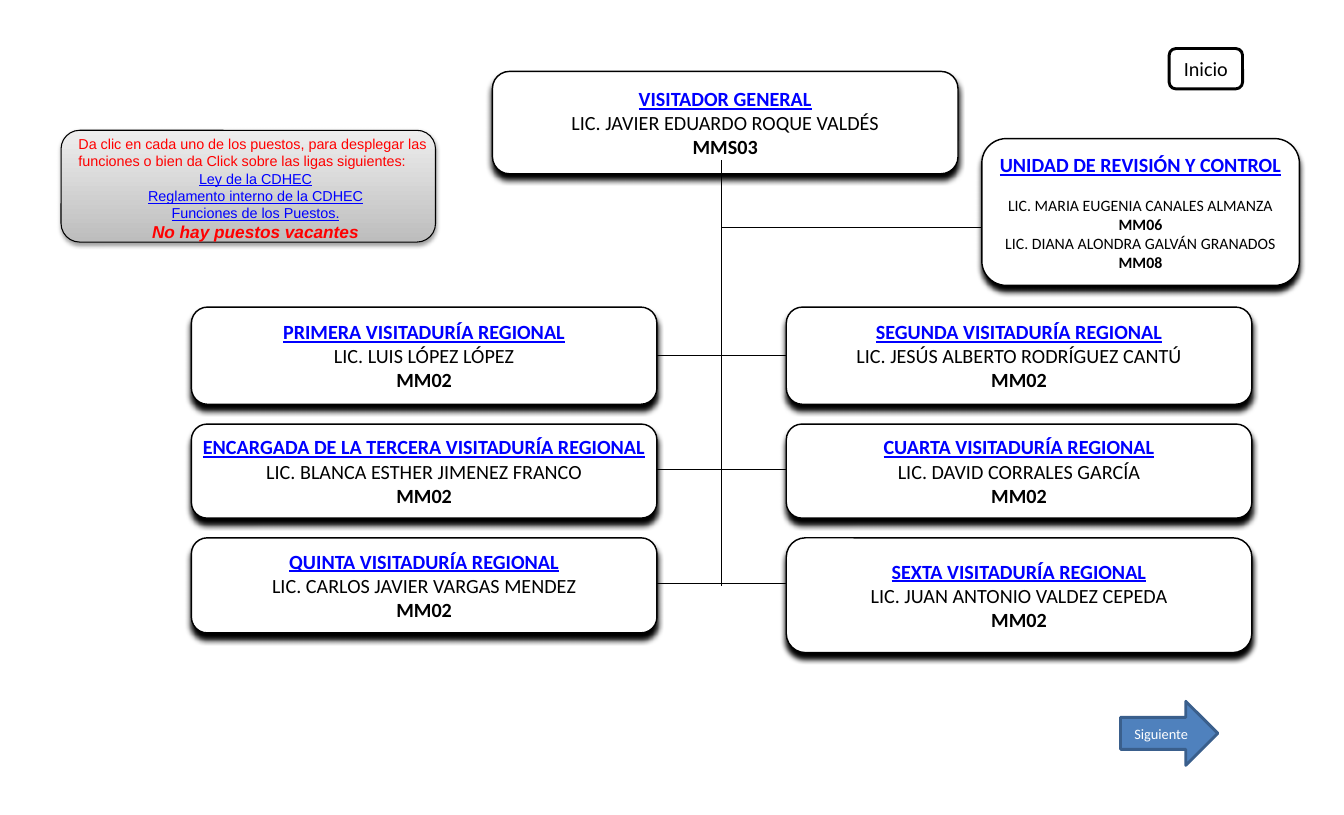
from lxml import etree
from pptx import Presentation
from pptx.dml.color import RGBColor
from pptx.enum.shapes import MSO_CONNECTOR, MSO_SHAPE
from pptx.enum.text import MSO_ANCHOR, PP_ALIGN
from pptx.oxml.ns import qn
from pptx.util import Pt

ROUND, ARROW = MSO_SHAPE.ROUNDED_RECTANGLE, MSO_SHAPE.RIGHT_ARROW
STRAIGHT = MSO_CONNECTOR.STRAIGHT
CENTER, LEFT, MIDDLE = PP_ALIGN.CENTER, PP_ALIGN.LEFT, MSO_ANCHOR.MIDDLE

# Content: each post has a title and its (name, grade) holders
HEAD = ("VISITADOR GENERAL", [("LIC. JAVIER EDUARDO ROQUE VALDÉS", "MMS03")])
UNIT = ("UNIDAD DE REVISIÓN Y CONTROL", [
    ("LIC. MARIA EUGENIA CANALES ALMANZA", "MM06"),
    ("LIC. DIANA ALONDRA GALVÁN GRANADOS", "MM08"),
])
REGIONS = [
    ("PRIMERA VISITADURÍA REGIONAL", [("LIC. LUIS LÓPEZ LÓPEZ", "MM02")]),
    ("SEGUNDA VISITADURÍA REGIONAL", [("LIC. JESÚS ALBERTO RODRÍGUEZ CANTÚ", "MM02")]),
    ("ENCARGADA DE LA TERCERA VISITADURÍA REGIONAL",
     [("LIC. BLANCA ESTHER JIMENEZ FRANCO", "MM02")]),
    ("CUARTA VISITADURÍA REGIONAL", [("LIC. DAVID CORRALES GARCÍA", "MM02")]),
    ("QUINTA VISITADURÍA REGIONAL", [("LIC. CARLOS JAVIER VARGAS MENDEZ", "MM02")]),
    ("SEXTA VISITADURÍA REGIONAL", [("LIC. JUAN ANTONIO VALDEZ CEPEDA", "MM02")]),
]
NOTICE = ("Da clic en cada uno de los puestos, para desplegar las funciones "
          "o bien da Click sobre las ligas siguientes:")
NOTICE_LINKS = ["Ley de la CDHEC", "Reglamento interno de la CDHEC",
                "Funciones de los Puestos."]
VACANCIES = "No hay puestos vacantes"

THEME = {
    "font": "Calibri", "notice_font": "Arial",
    "ink": "000000", "paper": "FFFFFF", "link": "0000FF", "alert": "FF0000",
    "arrow": "4F81BD", "arrow_line": "3A5F8C",
    "gray_dark": "BDBDBD", "gray_light": "EEEEEE",
    "post": 14, "unit": 11, "small": 10, "vacancies": 12,
}

# Layout in points
SLIDE_W, SLIDE_H = 935.28, 567.36
CARD_W = 324
COLUMNS = (133.2, 547.2)
ROWS = [(213.8, 67.7), (295.2, 65.5), (374.4, 66.2)]
LAST_CARD_H = 79.9
TRUNK_X, TRUNK_TOP, TRUNK_BOTTOM = 501.8, 111.6, 408.2
BAR_LEFT, BAR_RIGHT, BAR_TOP, BAR_PITCH = 422, 587, 247.7, 79.2
UNIT_BOX, UNIT_BAR_Y = (683.3, 96.5, 221, 102.2), 158.4


def rgb(name):
    return RGBColor.from_string(THEME[name])


def add_line(s, x1, y1, x2, y2):
    c = s.shapes.add_connector(STRAIGHT, Pt(x1), Pt(y1), Pt(x2), Pt(y2))
    c.line.color.rgb, c.line.width = rgb("ink"), Pt(0.75)
    etree.SubElement(c._element.spPr, qn("a:effectLst"))


def add_box(s, kind, box, line="ink", width=1, fill="paper"):
    sp = s.shapes.add_shape(kind, *map(Pt, box))
    sp.shadow.inherit = False
    sp.fill.solid()
    sp.fill.fore_color.rgb = rgb(fill)
    sp.line.color.rgb, sp.line.width = rgb(line), Pt(width)
    return sp


def add_shadow(sp, blur, dist, opacity):
    effects = sp._element.spPr.find(qn("a:effectLst"))
    shadow = etree.SubElement(effects, qn("a:outerShdw"), blurRad=str(Pt(blur)),
                              dist=str(Pt(dist)), dir="5400000", algn="t", rotWithShape="0")
    color = etree.SubElement(shadow, qn("a:srgbClr"), val=THEME["ink"])
    etree.SubElement(color, qn("a:alpha"), val=str(opacity * 1000))


def write(tf, lines, font="font", align=CENTER):
    """Each line is (text, size, colour, bold, underline)."""
    tf.text = "\n".join(line[0] for line in lines)
    for p, (_, size, color, bold, underline) in zip(tf.paragraphs, lines):
        p.alignment = align
        f = p.runs[0].font
        f.name, f.size, f.color.rgb = THEME[font], Pt(THEME[size]), rgb(color)
        f.bold, f.underline = bold, underline


def add_card(s, post, box, size="post", gap=0):
    title, holders = post
    sp = add_box(s, ROUND, box)
    add_shadow(sp, 4, 4, 100)
    tf = sp.text_frame
    tf.word_wrap, tf.vertical_anchor = False, MIDDLE
    tf.margin_left = tf.margin_right = Pt(12)
    tf.margin_top = tf.margin_bottom = Pt(6.5)
    lines = [(title, "post", "link", True, True)]
    for name, grade in holders:
        lines += [(name, size, "ink", False, False), (grade, size, "ink", True, False)]
    write(tf, lines)
    tf.paragraphs[1].space_before = Pt(gap)


def add_button(s, kind, box, text, size, color, **style):
    sp = add_box(s, kind, box, width=2, **style)
    sp.text_frame.word_wrap, sp.text_frame.vertical_anchor = False, MIDDLE
    write(sp.text_frame, [(text, size, color, False, False)])


def add_notice(s):
    sp = add_box(s, ROUND, (42.5, 90.7, 260.6, 77.8), width=0.75)
    add_shadow(sp, 3.1, 1.6, 38)
    sp.fill.gradient()
    sp.fill.gradient_angle = 90
    for stop, color in zip(sp.fill.gradient_stops, ("gray_dark", "gray_light")):
        stop.color.rgb = rgb(color)
    tf = s.shapes.add_textbox(Pt(47.5), Pt(90.7), Pt(260.6), Pt(82.1)).text_frame
    tf.word_wrap = True
    lines = [(NOTICE, "small", "alert", False, False)]
    lines += [(text, "small", "link", False, True) for text in NOTICE_LINKS]
    lines.append((VACANCIES, "vacancies", "alert", True, False))
    write(tf, lines, font="notice_font")
    tf.paragraphs[0].alignment = LEFT
    tf.paragraphs[-1].runs[0].font.italic = True


def main():
    prs = Presentation()
    prs.slide_width, prs.slide_height = Pt(SLIDE_W), Pt(SLIDE_H)
    s = prs.slides.add_slide(prs.slide_layouts[6])

    # Head of the chart, with the trunk over it
    add_card(s, HEAD, (342.7, 49.7, CARD_W, 71.3))
    add_line(s, TRUNK_X, TRUNK_TOP, TRUNK_X, TRUNK_BOTTOM)

    # Branches
    for row in range(len(ROWS)):
        y = BAR_TOP + row * BAR_PITCH
        add_line(s, BAR_LEFT, y, BAR_RIGHT, y)
    add_line(s, TRUNK_X, UNIT_BAR_Y, UNIT_BOX[0], UNIT_BAR_Y)

    # Regional offices, two to a row
    for i, post in enumerate(REGIONS):
        row, column = divmod(i, len(COLUMNS))
        top, height = ROWS[row]
        if i == len(REGIONS) - 1:
            height = LAST_CARD_H
        add_card(s, post, (COLUMNS[column], top, CARD_W, height))

    # Review unit
    add_card(s, UNIT, UNIT_BOX, size="unit", gap=13.4)

    # Notice and navigation
    add_notice(s)
    add_button(s, ROUND, (813.6, 33.8, 51.1, 28.1), "Inicio", "post", "ink")
    add_button(s, ARROW, (779.8, 488.2, 67.7, 44.6), "Siguiente", "small", "paper",
               line="arrow_line", fill="arrow")

    prs.save("out.pptx")


if __name__ == "__main__":
    main()
